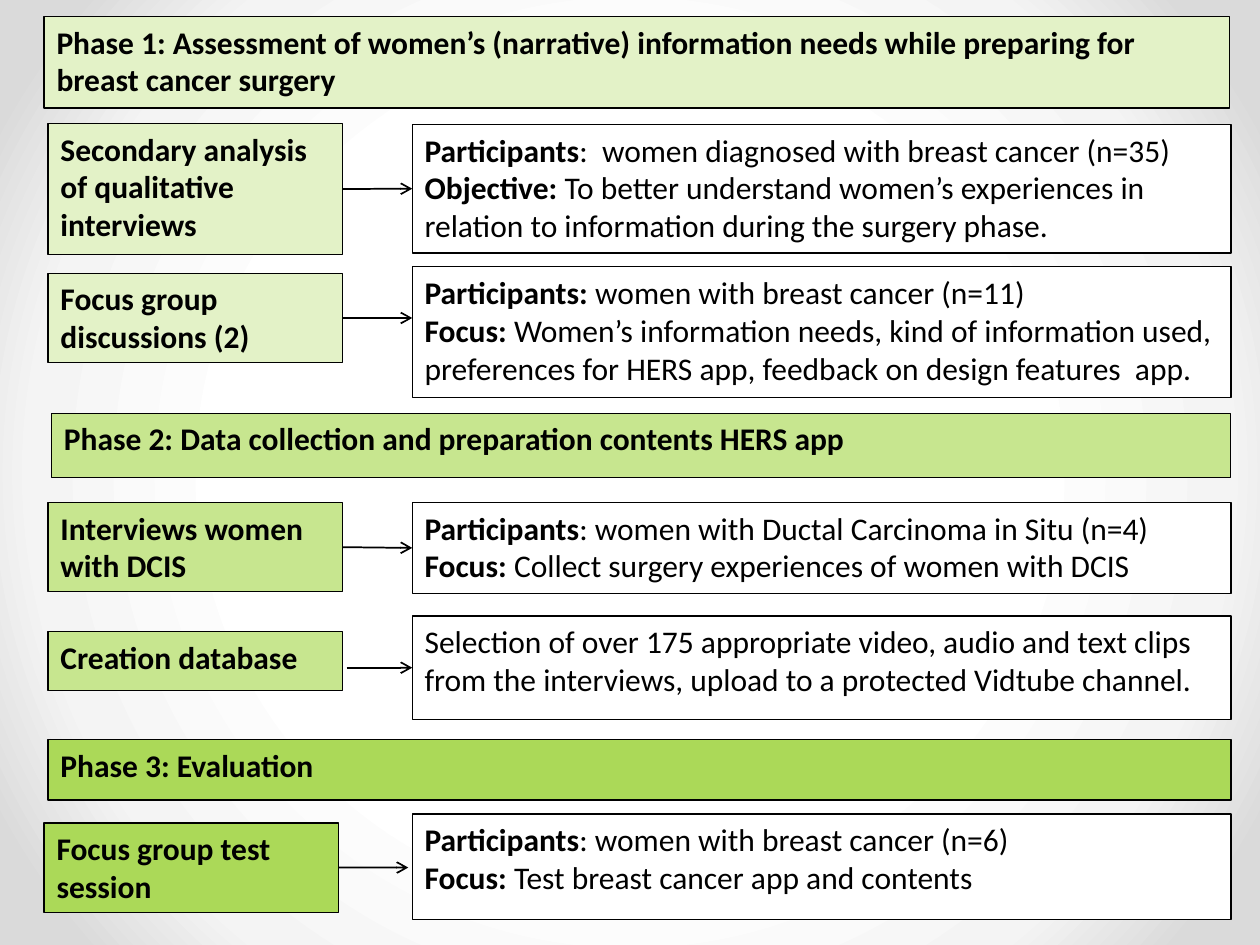
"""Build a one-slide flow chart of the three phases of a study."""
from pptx import Presentation
from pptx.dml.color import RGBColor
from pptx.enum.shapes import MSO_CONNECTOR, MSO_SHAPE
from pptx.enum.text import MSO_ANCHOR, PP_ALIGN
from pptx.oxml import parse_xml
from pptx.oxml.ns import nsdecls
from pptx.util import Cm, Pt

RECT = MSO_SHAPE.RECTANGLE
LINE = MSO_CONNECTOR.STRAIGHT
TOP = MSO_ANCHOR.TOP
LEFT = PP_ALIGN.LEFT

BLACK = RGBColor(0x00, 0x00, 0x00)
WHITE = RGBColor(0xFF, 0xFF, 0xFF)
PALE = RGBColor(0xE3, 0xF2, 0xC7)
LIGHT = RGBColor(0xC7, 0xE6, 0x8F)
GREEN = RGBColor(0xAB, 0xD9, 0x58)
STOPS = [(50, "FFFFFF"), (76, "F4F4F4"), (92, "DADADA")]

STEP_W = 5.94
NOTE_X, NOTE_W = 8.31, 16.51

PHASES = [
    (0.89, 0.33, 23.9, 1.85, PALE,
     "Phase 1: Assessment of women’s (narrative) information needs "
     "while preparing for breast cancer surgery"),
    (1.04, 8.33, 23.77, 1.3, LIGHT,
     "Phase 2: Data collection and preparation contents HERS app"),
    (0.97, 14.91, 23.85, 1.22, GREEN, "Phase 3: Evaluation"),
]

# Each step: left, top, height, fill, label; note top, height, paragraphs;
# arrow start, end and the ends that are joined.
STEPS = [
    ((0.97, 2.49, 2.64, PALE, "Secondary analysis of qualitative interviews"),
     (2.51, 2.59, [
         ("Participants", ":  women diagnosed with breast cancer (n=35)"),
         ("Objective: ", "To better understand women’s experiences in "
          "relation to information during the surgery phase.")]),
     (6.91, 8.31, 3.81, True, True)),
    ((0.97, 5.51, 1.8, PALE, "Focus group discussions (2)"),
     (5.38, 2.64, [
         ("Participants:", " women with breast cancer (n=11)"),
         ("Focus: ", "Women’s information needs, kind of information used, "
          "preferences for HERS app, feedback on design features  app.")]),
     (6.91, 8.31, 6.41, True, False)),
    ((0.97, 10.13, 1.8, LIGHT, "Interviews women with DCIS"),
     (10.13, 1.83, [
         ("Participants", ": women with Ductal Carcinoma in Situ (n=4)"),
         ("Focus: ", "Collect surgery experiences of women with DCIS")]),
     (6.91, 8.31, 11.05, True, True)),
    ((0.97, 12.73, 1.19, LIGHT, "Creation database"),
     (12.42, 2.08, [
         ("", "Selection of over 175 appropriate video, audio and text clips "
          "from the interviews, upload to a protected Vidtube channel.")]),
     (6.99, 8.31, 13.46, False, True)),
    ((0.89, 16.59, 1.8, GREEN, "Focus group test session"),
     (16.41, 2.13, [
         ("Participants", ": women with breast cancer (n=6)"),
         ("Focus: ", "Test breast cancer app and contents")]),
     (6.83, 8.23, 17.49, True, False)),
]


class Chart:
    """Hold the text style and the current slide."""

    def __init__(self, slide, font="Calibri", size=18):
        self.slide, self.font, self.size = slide, font, size

    def back(self):
        """Fill the background with a round gradient."""
        stops = "".join(
            f'<a:gs pos="{pos * 1000}"><a:srgbClr val="{tint}"/></a:gs>'
            for pos, tint in STOPS)
        self.slide.element.cSld.insert(0, parse_xml(
            f'<p:bg {nsdecls("p", "a")}><p:bgPr><a:gradFill rotWithShape="1">'
            f'<a:gsLst>{stops}</a:gsLst><a:path path="circle">'
            '<a:fillToRect l="50000" t="50000" r="50000" b="50000"/></a:path>'
            '</a:gradFill><a:effectLst/></p:bgPr></p:bg>'))

    def box(self, x, y, w, h, fill, paras):
        """Add a box whose paragraphs are pairs of bold and plain text."""
        box = self.slide.shapes.add_shape(RECT, Cm(x), Cm(y), Cm(w), Cm(h))
        box.shadow.inherit = False
        box.fill.solid()
        box.fill.fore_color.rgb = fill
        box.line.color.rgb = BLACK
        box.line.width = Pt(0.75)
        frame = box.text_frame
        frame.word_wrap = True
        frame.vertical_anchor = TOP
        for i, pair in enumerate(paras):
            para = frame.add_paragraph() if i else frame.paragraphs[0]
            para.alignment = LEFT
            for text, bold in zip(pair, (True, False)):
                if text:
                    run = para.add_run()
                    run.text = text
                    run.font.name = self.font
                    run.font.size = Pt(self.size)
                    run.font.bold = bold
                    run.font.color.rgb = BLACK
        return box

    def arrow(self, start, end, y, step=None, note=None):
        """Add an arrow, joined to the given boxes."""
        line = self.slide.shapes.add_connector(
            LINE, Cm(start), Cm(y), Cm(end), Cm(y))
        if step:
            line.begin_connect(step, 3)
        if note:
            line.end_connect(note, 1)
        line.line.color.rgb = BLACK
        line.line.width = Pt(1)
        line.line._get_or_add_ln().append(
            parse_xml(f'<a:tailEnd {nsdecls("a")} type="arrow"/>'))
        line._element.spPr.append(
            parse_xml(f'<a:effectLst {nsdecls("a")}/>'))


def main():
    deck = Presentation()
    deck.slide_width, deck.slide_height = Cm(25.4), Cm(19.05)
    chart = Chart(deck.slides.add_slide(deck.slide_layouts[6]))
    chart.back()
    for *place, fill, text in PHASES:
        chart.box(*place, fill, [(text, "")])
    for (x, y, h, fill, text), (top, high, paras), link in STEPS:
        step = chart.box(x, y, STEP_W, h, fill, [(text, "")])
        note = chart.box(NOTE_X, top, NOTE_W, high, WHITE, paras)
        start, end, mid, begin, finish = link
        chart.arrow(start, end, mid, step if begin else None,
                    note if finish else None)
    deck.save("out.pptx")


if __name__ == "__main__":
    main()
